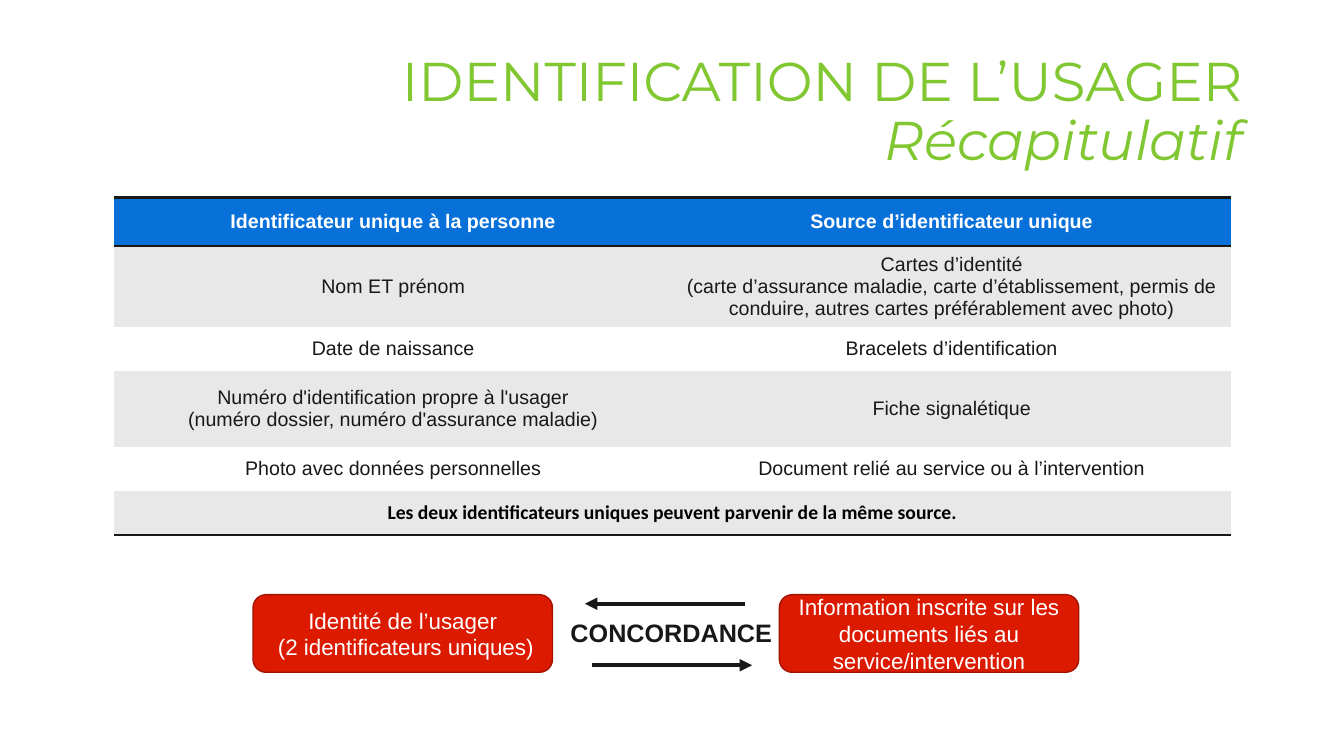
from lxml import etree
from pptx import Presentation
from pptx.dml.color import RGBColor
from pptx.enum.shapes import MSO_CONNECTOR as Connector, MSO_SHAPE as Shape
from pptx.enum.text import MSO_ANCHOR as Anchor, PP_ALIGN as Align
from pptx.oxml.ns import qn
from pptx.util import Inches, Pt

COLORS = {
    "title": "81C731", "header": "0871D9", "band": "E8E8E8", "white": "FFFFFF",
    "ink": "181817", "black": "000000", "box": "DB1A00", "box_line": "A21300",
}


def color(name):
    return RGBColor.from_string(COLORS[name])


def format_text(text_frame, size, color_name, font_name="Arial", bold=False, align=Align.CENTER):
    for paragraph in text_frame.paragraphs:
        paragraph.alignment = align
        for run in paragraph.runs:
            run.font.name = font_name
            run.font.size = Pt(size)
            run.font.bold = bold
            run.font.color.rgb = color(color_name)


presentation = Presentation()
presentation.slide_width, presentation.slide_height = Inches(13.33), Inches(7.5)
slide = presentation.slides.add_slide(presentation.slide_layouts[5])

title = slide.shapes.title
title.left, title.top, title.width, title.height = map(Inches, (1.94, 0.4, 10.48, 1.45))
title.text_frame.text = "IDENTIFICATION DE L’USAGER\vRécapitulatif"
title.text_frame.vertical_anchor = Anchor.MIDDLE
title.text_frame.word_wrap = True
format_text(title.text_frame, 39, "title", "Montserrat", align=Align.RIGHT)
title_paragraph = title.text_frame.paragraphs[0]
title_paragraph.line_spacing = 0.9
title_paragraph.runs[1].font.italic = True

boxes = [
    (2.51, "Identité de l’usager\n (2 identificateurs uniques)"),
    (7.73, "Information inscrite sur les documents liés au service/intervention"),
]
for left, text in boxes:
    box = slide.shapes.add_shape(
        Shape.ROUNDED_RECTANGLE, Inches(left), Inches(5.9), Inches(2.97), Inches(0.77))
    box.shadow.inherit = False
    box.fill.solid()
    box.fill.fore_color.rgb = color("box")
    box.line.color.rgb = color("box_line")
    box.line.width = Pt(1)
    box.text_frame.text = text
    box.text_frame.word_wrap = True
    box.text_frame.vertical_anchor = Anchor.MIDDLE
    format_text(box.text_frame, 16, "white")

label = slide.shapes.add_textbox(Inches(5.56), Inches(6.08), Inches(2.21), Inches(0.4))
label.text_frame.text = "CONCORDANCE"
label.text_frame.word_wrap = False
format_text(label.text_frame, 18, "ink", bold=True, align=Align.LEFT)

for start, end, y in [(7.39, 5.8, 5.99), (5.87, 7.46, 6.6)]:
    arrow = slide.shapes.add_connector(
        Connector.STRAIGHT, Inches(start), Inches(y), Inches(end), Inches(y))
    arrow.line.color.rgb = color("ink")
    arrow.line.width = Pt(3)
    etree.SubElement(arrow.line._get_or_add_ln(), qn("a:tailEnd"), type="triangle")
    etree.SubElement(arrow._element.spPr, qn("a:effectLst"))

rows = [
    ("Identificateur unique à la personne", "Source d’identificateur unique"),
    ("Nom ET prénom",
     "Cartes d’identité\n(carte d’assurance maladie, carte d’établissement, "
     "permis de conduire, autres cartes préférablement avec photo)"),
    ("Date de naissance", "Bracelets d’identification"),
    ("Numéro d'identification propre à l'usager\n(numéro dossier, numéro d'assurance maladie)",
     "Fiche signalétique"),
    ("Photo avec données personnelles", "Document relié au service ou à l’intervention"),
    ("Les deux identificateurs uniques peuvent parvenir de la même source.", ""),
]
row_heights = [0.48, 0.78, 0.44, 0.75, 0.44, 0.44]
last_row = len(rows) - 1
borders = {0: ("a:lnT", "a:lnB"), last_row: ("a:lnB",)}

table = slide.shapes.add_table(
    len(rows), 2, Inches(1.13), Inches(1.96), Inches(11.08), Inches(sum(row_heights))).table
table.first_row = False
table.horz_banding = False
table._tbl.tblPr.find(qn("a:tableStyleId")).text = "{2D5ABB26-0587-4C30-8999-92F81FD0307C}"
table.cell(last_row, 0).merge(table.cell(last_row, 1))

for row_index, texts in enumerate(rows):
    table.rows[row_index].height = Inches(row_heights[row_index])
    for column_index, text in enumerate(texts):
        cell = table.cell(row_index, column_index)
        for tag in borders.get(row_index, ()):
            border = etree.SubElement(cell._tc.get_or_add_tcPr(), qn(tag), w=str(Pt(2)))
            border_fill = etree.SubElement(border, qn("a:solidFill"))
            etree.SubElement(border_fill, qn("a:srgbClr"), val=COLORS["ink"])
        cell.fill.solid()
        fill_name = "header" if row_index == 0 else "band" if row_index % 2 else "white"
        cell.fill.fore_color.rgb = color(fill_name)
        cell.vertical_anchor = Anchor.MIDDLE
        cell.margin_left = cell.margin_right = Inches(0.09)
        if text:
            cell.text_frame.text = text
            if row_index == 0:
                format_text(cell.text_frame, 14, "white", bold=True)
            elif row_index == last_row:
                format_text(cell.text_frame, 14, "black", "Calibri", bold=True)
            else:
                format_text(cell.text_frame, 14, "ink")

presentation.save("out.pptx")
